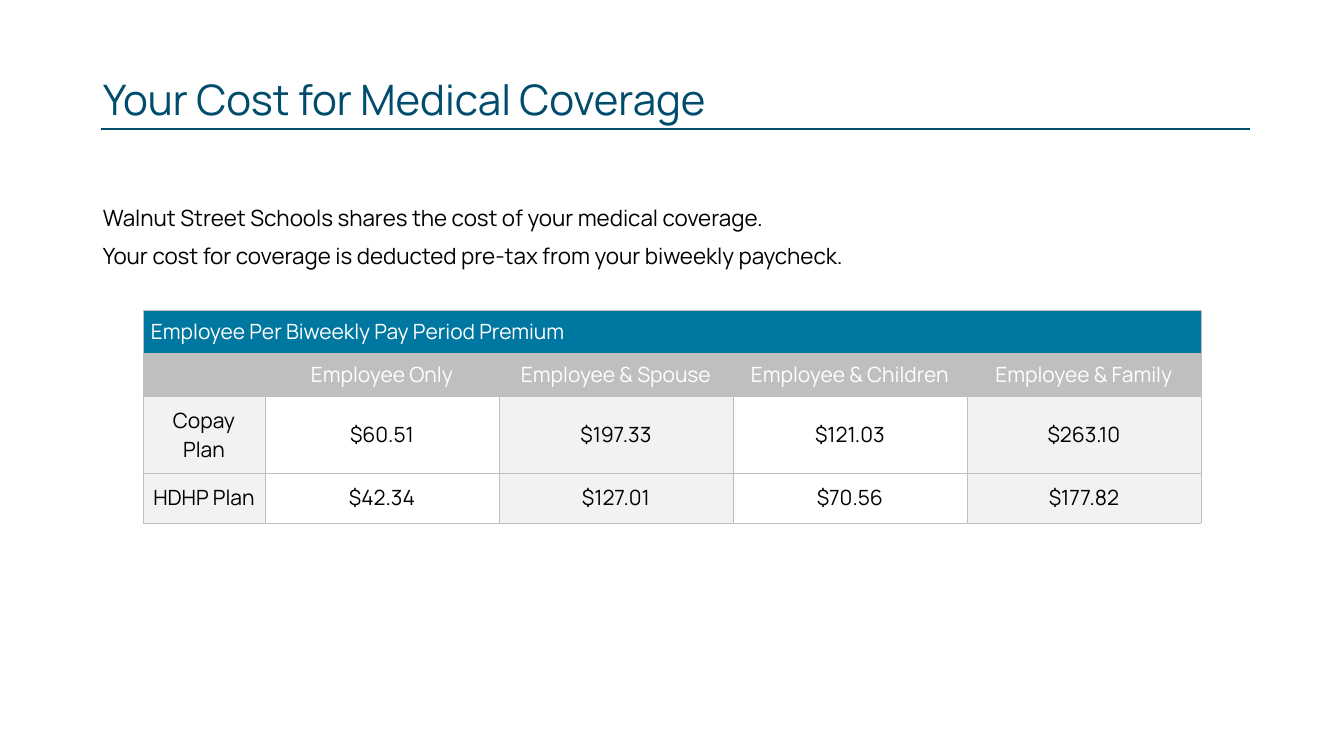
import pptx
import pptx.dml.color
import pptx.enum.shapes
import pptx.enum.text
import pptx.oxml
import pptx.oxml.ns
import pptx.util

# Content
TITLE = "Your Cost for Medical Coverage"
INTRO = [
    "Walnut Street Schools shares the cost of your medical coverage.",
    "Your cost for coverage is deducted pre-tax from your biweekly paycheck.",
]
PREMIUMS = [
    ["Employee Per Biweekly Pay Period Premium", "", "", "", ""],
    ["", "Employee Only", "Employee & Spouse", "Employee & Children", "Employee & Family"],
    ["Copay Plan", "$60.51", "$197.33", "$121.03", "$263.10"],
    ["HDHP Plan", "$42.34", "$127.01", "$70.56", "$177.82"],
]

# Style and layout, lengths in px
FONT = "Manrope"
COLORS = {
    "navy": "004C6C", "blue": "0077A0", "gray": "BFBFBF",
    "light": "F2F2F2", "white": "FFFFFF", "black": "000000",
}
EMU_PER_PX = 914400 / 100.8
COLUMN_WIDTHS = [122] + [234] * 4
ROW_HEIGHTS = [43, 43, 77, 50]
BANNER_MARGINS = (8, 4, 8, 4)
HEADING_MARGINS = (9, 0, 9, 0)
BODY_MARGINS = (10, 10, 10, 10)
ALIGN = pptx.enum.text.PP_ALIGN
MIDDLE = pptx.enum.text.MSO_ANCHOR.MIDDLE


def px(length):
    return pptx.util.Emu(round(length * EMU_PER_PX))


def rgb(name):
    return pptx.dml.color.RGBColor.from_string(COLORS[name])


def format_paragraph(paragraph, size, color, align=ALIGN.LEFT):
    paragraph.alignment = align
    paragraph.font.name = FONT
    paragraph.font.size = pptx.util.Pt(size)
    paragraph.font.color.rgb = rgb(color)


def add_borders(cell):
    properties = cell._tc.get_or_add_tcPr()
    for index, side in enumerate(("lnL", "lnR", "lnT", "lnB")):
        border = pptx.oxml.parse_xml(
            f'<a:{side} {pptx.oxml.ns.nsdecls("a")} w="3175"><a:solidFill>'
            f'<a:srgbClr val="{COLORS["gray"]}"/></a:solidFill></a:{side}>')
        properties.insert(index, border)


def cell_style(row, column):
    """Return fill, text colour, alignment and margins."""
    if row == 0:
        return "blue", "white", ALIGN.LEFT, BANNER_MARGINS
    if row == 1:
        return "gray", "white", ALIGN.CENTER, HEADING_MARGINS
    return ("white" if column % 2 else "light"), "black", ALIGN.CENTER, BODY_MARGINS


presentation = pptx.Presentation()
presentation.slide_width = px(1344)
presentation.slide_height = px(756)
slide = presentation.slides.add_slide(presentation.slide_layouts[5])

# Title
title = slide.shapes.title
title.left, title.top, title.width, title.height = map(px, (93, 75, 1159, 54))
title.text_frame.text = TITLE
title.text_frame.auto_size = pptx.enum.text.MSO_AUTO_SIZE.NONE
title.text_frame.vertical_anchor = MIDDLE
title_paragraph = title.text_frame.paragraphs[0]
title_paragraph.line_spacing = 0.9
format_paragraph(title_paragraph, 30, "navy")

# Rule under the title
rule = slide.shapes.add_connector(
    pptx.enum.shapes.MSO_CONNECTOR.STRAIGHT, px(101), px(129), px(1250), px(129))
rule.line.color.rgb = rgb("navy")
rule.line.width = pptx.util.Pt(1.5)
rule._element.spPr.append(
    pptx.oxml.parse_xml(f'<a:effectLst {pptx.oxml.ns.nsdecls("a")}/>'))

# Introduction
intro = slide.shapes.add_textbox(px(93), px(202), px(1159), px(80)).text_frame
intro.word_wrap = True
intro.text = "\n".join(INTRO)
for index, paragraph in enumerate(intro.paragraphs):
    paragraph.line_spacing = 0.9
    paragraph.space_before = pptx.util.Pt(10 if index else 0)
    format_paragraph(paragraph, 16, "black")

# Premium table
table = slide.shapes.add_table(
    len(ROW_HEIGHTS), len(COLUMN_WIDTHS), px(143), px(310),
    px(sum(COLUMN_WIDTHS)), px(sum(ROW_HEIGHTS))).table
for column, width in zip(table.columns, COLUMN_WIDTHS):
    column.width = px(width)
for row, height in zip(table.rows, ROW_HEIGHTS):
    row.height = px(height)

for row, texts in enumerate(PREMIUMS):
    for column, text in enumerate(texts):
        fill, color, align, margins = cell_style(row, column)
        cell = table.cell(row, column)
        cell.text = text
        cell.vertical_anchor = MIDDLE
        (cell.margin_left, cell.margin_top,
         cell.margin_right, cell.margin_bottom) = map(px, margins)
        cell.fill.solid()
        cell.fill.fore_color.rgb = rgb(fill)
        add_borders(cell)
        format_paragraph(cell.text_frame.paragraphs[0], 15, color, align)
table.cell(0, 0).merge(table.cell(0, len(COLUMN_WIDTHS) - 1))

presentation.save("out.pptx")
